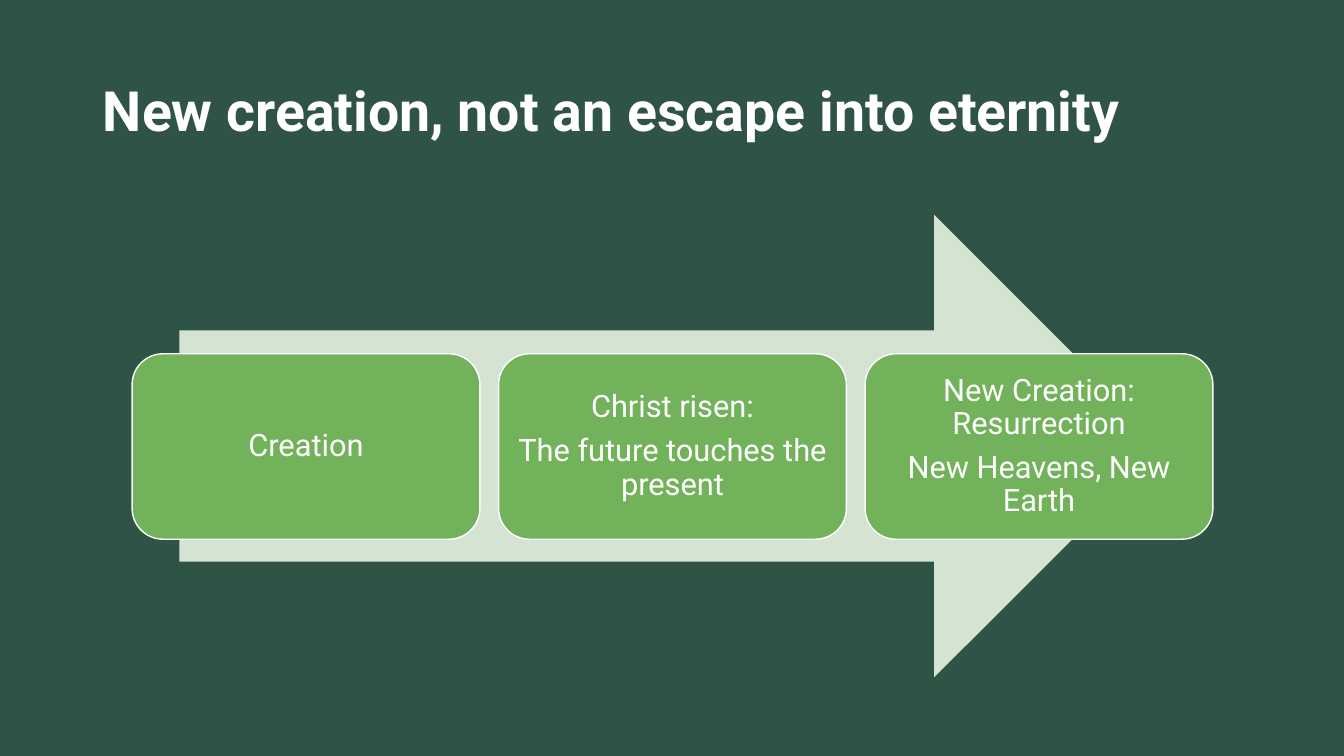
import pptx
import pptx.dml.color
import pptx.enum.shapes
import pptx.enum.text
import pptx.util

Inches = pptx.util.Inches
Pt = pptx.util.Pt
Shapes = pptx.enum.shapes.MSO_SHAPE
Align = pptx.enum.text.PP_ALIGN


def paint(color_format, hex_color):
    color_format.rgb = pptx.dml.color.RGBColor.from_string(hex_color)


def write(frame, lines, size, align, bold=False, gap=0, inset=0.1):
    frame.word_wrap = True
    frame.auto_size = pptx.enum.text.MSO_AUTO_SIZE.NONE
    frame.vertical_anchor = pptx.enum.text.MSO_ANCHOR.MIDDLE
    frame.margin_left = frame.margin_right = Inches(inset)
    frame.margin_top = frame.margin_bottom = Inches(inset)
    frame.text = "\n".join(lines)
    for paragraph in frame.paragraphs:
        paragraph.alignment = align
        paragraph.line_spacing = 0.9
        paragraph.space_before = Pt(0)
        paragraph.space_after = Pt(0)
        paragraph.font.name = "Roboto"
        paragraph.font.size = Pt(size)
        paragraph.font.bold = bold
        paint(paragraph.font.color, "FFFFFF")
    for paragraph in frame.paragraphs[:-1]:
        paragraph.space_after = Pt(gap)


deck = pptx.Presentation()
deck.slide_width = Inches(13.33)
deck.slide_height = Inches(7.5)
slide = deck.slides.add_slide(deck.slide_layouts[5])
slide.background.fill.solid()
paint(slide.background.fill.fore_color, "2F5344")

heading = slide.shapes.title
heading.left, heading.top = Inches(0.92), Inches(0.4)
heading.width, heading.height = Inches(11.5), Inches(1.45)
write(heading.text_frame, ["New creation, not an escape into eternity"],
      size=39.6, align=Align.LEFT, bold=True)

timeline = slide.shapes.add_shape(
    Shapes.RIGHT_ARROW, Inches(1.78), Inches(2.13), Inches(9.78), Inches(4.59))
timeline.shadow.inherit = False
timeline.fill.solid()
paint(timeline.fill.fore_color, "D5E4D2")
timeline.line.fill.background()

stages = [
    ["Creation"],
    ["Christ risen:", "The future touches the present"],
    ["New Creation: Resurrection", "New Heavens, New Earth"],
]
first_left, stage_pitch = 1.31, 3.635
for column, lines in enumerate(stages):
    stage = slide.shapes.add_shape(
        Shapes.ROUNDED_RECTANGLE, Inches(first_left + column * stage_pitch),
        Inches(3.51), Inches(3.45), Inches(1.84))
    stage.shadow.inherit = False
    stage.fill.solid()
    paint(stage.fill.fore_color, "71B25A")
    paint(stage.line.color, "FFFFFF")
    stage.line.width = Pt(1)
    write(stage.text_frame, lines, size=22, align=Align.CENTER, gap=7.7, inset=0.09)

deck.save("out.pptx")
